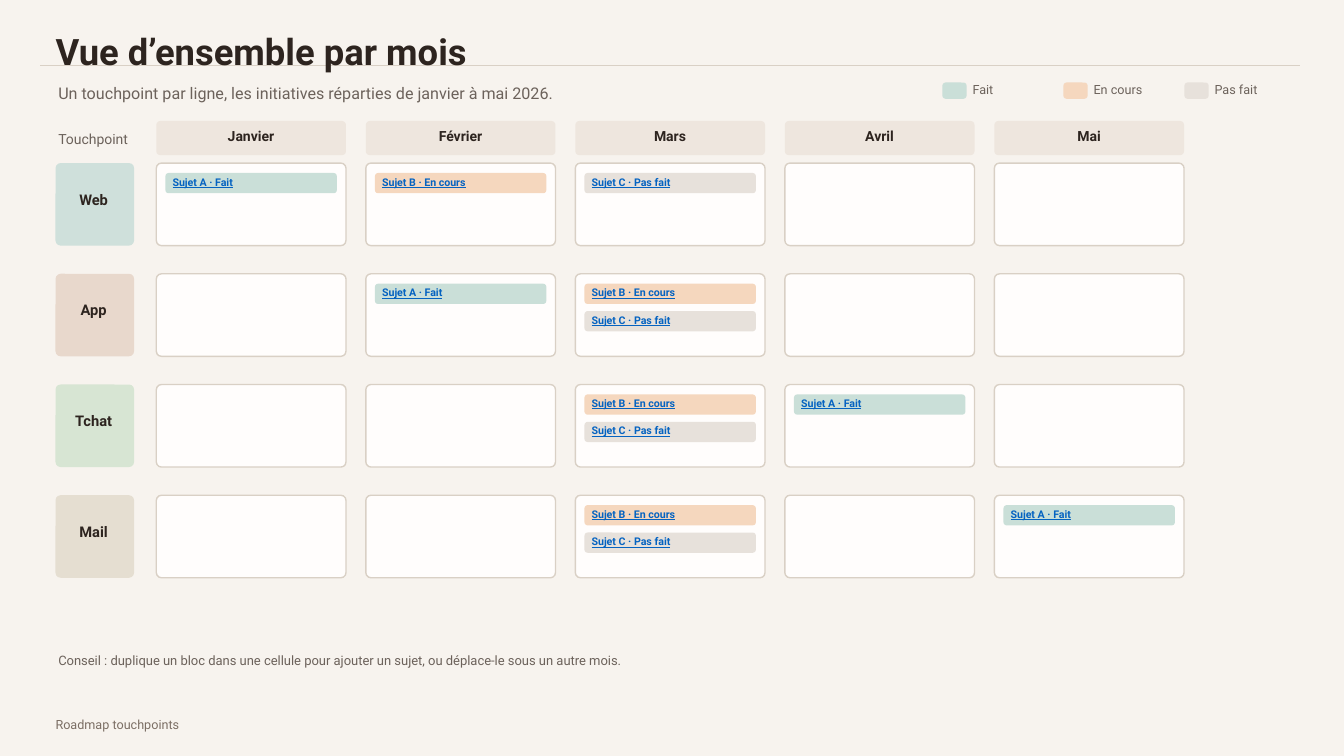
from pptx import Presentation
from pptx.dml.color import RGBColor
from pptx.enum import shapes, text
from pptx.oxml import ns
from pptx.util import Cm, Pt
from lxml import etree

COLORS = {
    "background": "F7F3EE", "ink": "2D241F", "muted": "6C625B",
    "footer": "7B6E64", "border": "D9D0C5", "cell": "FFFDFC",
    "month": "EEE6DE", "link": "0563C1",
    "Fait": "CADFD8", "En cours": "F5D7BE", "Pas fait": "E7E1DB",
    "Web": "CFE0DB", "App": "E8D8CC", "Tchat": "D7E5D3", "Mail": "E5DED1",
}
MONTHS = ["Janvier", "Février", "Mars", "Avril", "Mai"]
STATUSES = ["Fait", "En cours", "Pas fait"]
SUBJECTS = {"A": "Fait", "B": "En cours", "C": "Pas fait"}
PLANNING = {
    "Web": {"Janvier": "A", "Février": "B", "Mars": "C"},
    "App": {"Février": "A", "Mars": "BC"},
    "Tchat": {"Mars": "BC", "Avril": "A"},
    "Mail": {"Mars": "BC", "Mai": "A"},
}
GRID_LEFT, GRID_TOP = 3.94, 4.11
COL_STEP, ROW_STEP = 5.28, 2.79
CELL_W, CELL_H = 4.78, 2.08


def rgb(name):
    return RGBColor.from_string(COLORS[name])


def add_text(s, content, x, y, w, h, size, color="muted",
             bold=False, centered=False, underline=False):
    tf = s.shapes.add_textbox(Cm(x), Cm(y), Cm(w), Cm(h)).text_frame
    tf.word_wrap = True
    tf.vertical_anchor = text.MSO_ANCHOR.MIDDLE
    tf.margin_left = tf.margin_right = tf.margin_top = tf.margin_bottom = 0
    p = tf.paragraphs[0]
    p.text = content
    p.alignment = text.PP_ALIGN.CENTER if centered else text.PP_ALIGN.LEFT
    p.font.name = "Roboto"
    p.font.size = Pt(size)
    p.font.bold = bold
    p.font.underline = underline
    p.font.color.rgb = rgb(color)


def add_block(s, x, y, w, h, fill, radius, line=None):
    sp = s.shapes.add_shape(shapes.MSO_SHAPE.ROUNDED_RECTANGLE,
                            Cm(x), Cm(y), Cm(w), Cm(h))
    sp.adjustments[0] = radius / min(w, h)
    sp.shadow.inherit = False
    sp.fill.solid()
    sp.fill.fore_color.rgb = rgb(fill)
    if line:
        sp.line.color.rgb = rgb(line)
        sp.line.width = Pt(1)
    else:
        sp.line.fill.background()


def add_rule(s, x1, x2, y):
    rule = s.shapes.add_connector(shapes.MSO_CONNECTOR.STRAIGHT,
                                  Cm(x1), Cm(y), Cm(x2), Cm(y))
    rule.line.color.rgb = rgb("border")
    rule.line.width = Pt(1)
    etree.SubElement(rule._element.spPr, ns.qn("a:effectLst"))


def add_legend(s):
    for i, status in enumerate(STATUSES):
        x = 23.75 + i * 3.05
        add_block(s, x, 2.08, 0.61, 0.41, status, 0.08)
        add_text(s, status, x + 0.76, 2.01, 2.03, 0.51, 9)


def add_month(s, month, x):
    add_block(s, x, 3.05, CELL_W, 0.86, "month", 0.1)
    add_text(s, month, x + 0.2, 3.28, 4.37, 0.3, 10, "ink",
             bold=True, centered=True)


def add_touchpoint(s, touchpoint, y):
    add_block(s, 1.4, y, 1.98, CELL_H, touchpoint, 0.13)
    add_text(s, touchpoint, 1.6, y + 0.76, 1.52, 0.3, 10.5, "ink",
             bold=True, centered=True)


def add_cell(s, subjects, x, y):
    add_block(s, x, y, CELL_W, CELL_H, "cell", 0.13, "border")
    for i, subject in enumerate(subjects):
        status = SUBJECTS[subject]
        top = y + 0.25 + i * 0.69
        add_block(s, x + 0.23, top, 4.32, 0.51, status, 0.08)
        add_text(s, f"Sujet {subject} · {status}", x + 0.41, top + 0.1,
                 3.71, 0.25, 7.6, "link", bold=True, underline=True)


def add_grid(s):
    add_text(s, "Touchpoint", 1.47, 3.3, 1.91, 0.38, 10)
    columns = [(month, GRID_LEFT + i * COL_STEP)
               for i, month in enumerate(MONTHS)]
    for month, x in columns:
        add_month(s, month, x)
    for row, (touchpoint, plan) in enumerate(PLANNING.items()):
        y = GRID_TOP + row * ROW_STEP
        add_touchpoint(s, touchpoint, y)
        for month, x in columns:
            add_cell(s, plan.get(month, ""), x, y)


def main():
    prs = Presentation()
    prs.slide_width, prs.slide_height = Cm(33.87), Cm(19.05)
    s = prs.slides.add_slide(prs.slide_layouts[6])
    s.background.fill.solid()
    s.background.fill.fore_color.rgb = rgb("background")

    add_rule(s, 1.02, 32.77, 1.65)
    add_text(s, "Roadmap touchpoints", 1.4, 17.98, 7.62, 0.56, 9, "footer")
    add_text(s, "Vue d’ensemble par mois", 1.4, 0.71, 20.32, 1.14, 26,
             "ink", bold=True)
    add_text(s, "Un touchpoint par ligne, les initiatives réparties "
             "de janvier à mai 2026.", 1.47, 1.98, 20.32, 0.71, 11.5)
    add_legend(s)
    add_grid(s)
    add_text(s, "Conseil : duplique un bloc dans une cellule pour ajouter "
             "un sujet, ou déplace-le sous un autre mois.",
             1.47, 16.46, 17.78, 0.38, 9.3)
    prs.save("out.pptx")


if __name__ == "__main__":
    main()
